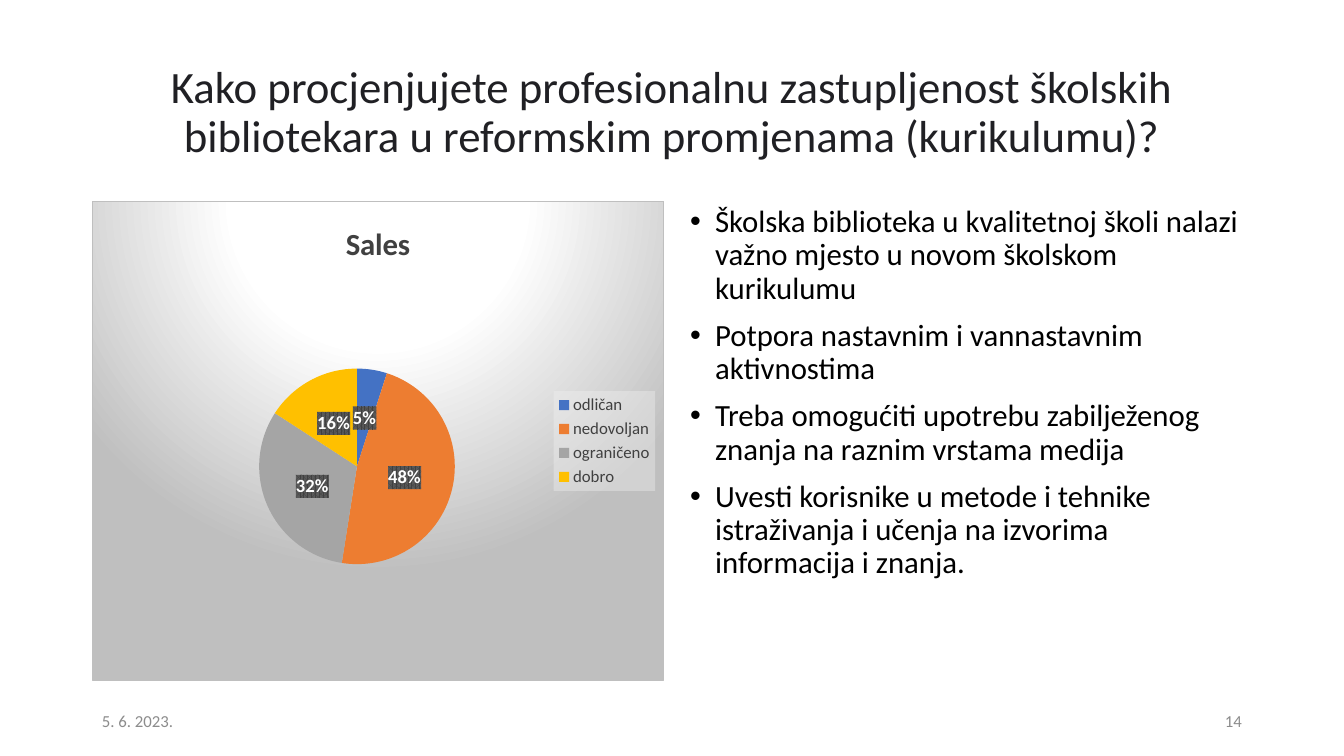
"""Build a survey slide with a pie chart beside a bulleted list."""
from pptx import Presentation
from pptx.chart.data import CategoryChartData
from pptx.dml.color import RGBColor
from pptx.enum.chart import XL_CHART_TYPE as ChartType
from pptx.enum.chart import XL_LABEL_POSITION as LabelPos
from pptx.enum.chart import XL_LEGEND_POSITION as LegendPos
from pptx.enum.text import MSO_ANCHOR as Anchor
from pptx.enum.text import MSO_AUTO_SIZE as AutoSize
from pptx.enum.text import PP_ALIGN as Align
from pptx.oxml import parse_xml
from pptx.oxml.ns import nsdecls, qn
from pptx.util import Pt

QUESTION = ("Kako procjenjujete profesionalnu zastupljenost školskih "
            "bibliotekara u reformskim promjenama (kurikulumu)?")
POINTS = [
    "Školska biblioteka u kvalitetnoj školi nalazi važno mjesto u novom školskom kurikulumu",
    "Potpora nastavnim i vannastavnim aktivnostima",
    "Treba omogućiti upotrebu zabilježenog znanja na raznim vrstama medija",
    "Uvesti korisnike u metode i tehnike istraživanja i učenja na izvorima informacija i znanja.",
]
CHART_TITLE = "Sales"
ANSWERS = [
    ("odličan", 5, "4472C4"),
    ("nedovoljan", 48, "ED7D31"),
    ("ograničeno", 32, "A5A5A5"),
    ("dobro", 16, "FFC000"),
]
COLORS = {
    "title": "202024", "body": "000000", "footer": "8C8C8C", "chart": "404040",
    "label": "FFFFFF", "hatch": "595959", "legend": "F2F2F2", "edge": "BFBFBF",
}

EMU_PER_PX = 914400 / 100.8
SLIDE_W, SLIDE_H = 1344, 756
MARGIN, GAP = 92, 16
CONTENT_W = SLIDE_W - 2 * MARGIN
COLUMN_W = (CONTENT_W - GAP) // 2
COLUMN_TOP, COLUMN_H = 201, 480
PLOT_LEFT, PLOT_TOP, PLOT_W, PLOT_H = 167, 66, 196, 399
FOOTER_TOP, FOOTER_W, FOOTER_H = 701, 302, 40
INDENT = 25


def px(length):
    return round(length * EMU_PER_PX)


def box(*lengths):
    return [px(length) for length in lengths]


def apply(target, formats):
    for name, value in formats.items():
        setattr(target, name, value)


def style(font, size, color, bold=False):
    apply(font, {"name": "Calibri", "size": Pt(size), "bold": bold})
    font.color.rgb = RGBColor.from_string(COLORS[color])


def fill_text(shape, lines, size, color, frame_formats, line_formats):
    frame = shape.text_frame
    frame.text = "\n".join(lines)
    apply(frame, {"word_wrap": True, "auto_size": AutoSize.NONE, **frame_formats})
    for line in frame.paragraphs:
        apply(line, line_formats)
        style(line.runs[0].font, size, color)


def place(shape, *lengths):
    apply(shape, dict(zip(("left", "top", "width", "height"), box(*lengths))))


def chart_xml(tag, content):
    return parse_xml(f'<c:{tag} {nsdecls("c", "a")}>{content}</c:{tag}>')


def rgb_xml(color, extra=""):
    return f'<a:srgbClr val="{COLORS[color]}">{extra}</a:srgbClr>'


def add_background(owner, content):
    owner.find(qn("c:txPr")).addprevious(chart_xml("spPr", content))


def set_plot_layout(plot_area):
    for layout in plot_area.findall(qn("c:layout")):
        plot_area.remove(layout)
    modes = '<c:layoutTarget val="inner"/><c:xMode val="edge"/><c:yMode val="edge"/>'
    shares = {"x": PLOT_LEFT / COLUMN_W, "y": PLOT_TOP / COLUMN_H,
              "w": PLOT_W / COLUMN_W, "h": PLOT_H / COLUMN_H}
    sides = "".join(f'<c:{side} val="{share}"/>' for side, share in shares.items())
    plot_area.insert(0, chart_xml(
        "layout", f"<c:manualLayout>{modes}{sides}</c:manualLayout>"))


def add_answers(slide):
    data = CategoryChartData()
    data.categories = [answer for answer, _, _ in ANSWERS]
    data.add_series(CHART_TITLE, [share for _, share, _ in ANSWERS])
    chart = slide.shapes.add_chart(
        ChartType.PIE, *box(MARGIN, COLUMN_TOP, COLUMN_W, COLUMN_H), data).chart
    style(chart.font, 10, "body")
    apply(chart, {"has_title": True, "has_legend": True})

    heading = chart.chart_title.text_frame
    heading.text = CHART_TITLE
    style(heading.paragraphs[0].runs[0].font, 22, "chart", True)

    legend = chart.legend
    apply(legend, {"position": LegendPos.RIGHT, "include_in_layout": False})
    style(legend.font, 12, "chart")

    pie = chart.plots[0]
    apply(pie, {"vary_by_categories": True, "has_data_labels": True})
    labels = pie.data_labels
    apply(labels, {"show_percentage": True, "show_value": False,
                   "number_format": "0%", "number_format_is_linked": False,
                   "position": LabelPos.CENTER})
    style(labels.font, 13.3, "label", True)
    for index, (_, _, color) in enumerate(ANSWERS):
        slice_fill = pie.series[0].points[index].format.fill
        slice_fill.solid()
        slice_fill.fore_color.rgb = RGBColor.from_string(color)

    root = chart.element
    set_plot_layout(root.find(".//" + qn("c:plotArea")))
    stops = "".join(f'<a:gs pos="{percent * 1000}">{rgb_xml(color)}</a:gs>'
                    for percent, color in ((0, "label"), (39, "label"), (100, "edge")))
    add_background(root, (
        f'<a:gradFill><a:gsLst>{stops}</a:gsLst><a:path path="circle">'
        '<a:fillToRect l="50000" t="-80000" r="50000" b="180000"/></a:path></a:gradFill>'
        f'<a:ln w="{Pt(0.75)}"><a:solidFill>{rgb_xml("edge")}</a:solidFill></a:ln>'))
    veil = rgb_xml("legend", '<a:alpha val="39000"/>')
    add_background(root.find(".//" + qn("c:legend")), f"<a:solidFill>{veil}</a:solidFill>")
    add_background(root.find(".//" + qn("c:dLbls")), (
        f'<a:pattFill prst="pct75"><a:fgClr>{rgb_xml("chart")}</a:fgClr>'
        f'<a:bgClr>{rgb_xml("hatch")}</a:bgClr></a:pattFill>'))


def main():
    deck = Presentation()
    apply(deck, {"slide_width": px(SLIDE_W), "slide_height": px(SLIDE_H)})
    slide = deck.slides.add_slide(deck.slide_layouts[1])

    title = slide.shapes.title
    place(title, MARGIN, 40, CONTENT_W, 147)
    fill_text(title, [QUESTION], 32, "title", {"vertical_anchor": Anchor.MIDDLE},
              {"alignment": Align.CENTER, "line_spacing": 0.9})

    add_answers(slide)

    body = slide.placeholders[1]
    place(body, MARGIN + COLUMN_W + GAP, COLUMN_TOP, COLUMN_W, COLUMN_H)
    fill_text(body, POINTS, 22, "body", {"vertical_anchor": Anchor.TOP},
              {"line_spacing": 0.9, "space_before": Pt(10)})
    for point in body.text_frame.paragraphs:
        properties = point._p.get_or_add_pPr()
        properties.set("marL", str(px(INDENT)))
        properties.set("indent", str(-px(INDENT)))

    for note, left, alignment in (
            ("5. 6. 2023.", MARGIN, Align.LEFT),
            ("14", SLIDE_W - MARGIN - FOOTER_W, Align.RIGHT)):
        footer = slide.shapes.add_textbox(*box(left, FOOTER_TOP, FOOTER_W, FOOTER_H))
        fill_text(footer, [note], 12, "footer", {"vertical_anchor": Anchor.MIDDLE},
                  {"alignment": alignment})

    deck.save("out.pptx")


if __name__ == "__main__":
    main()
